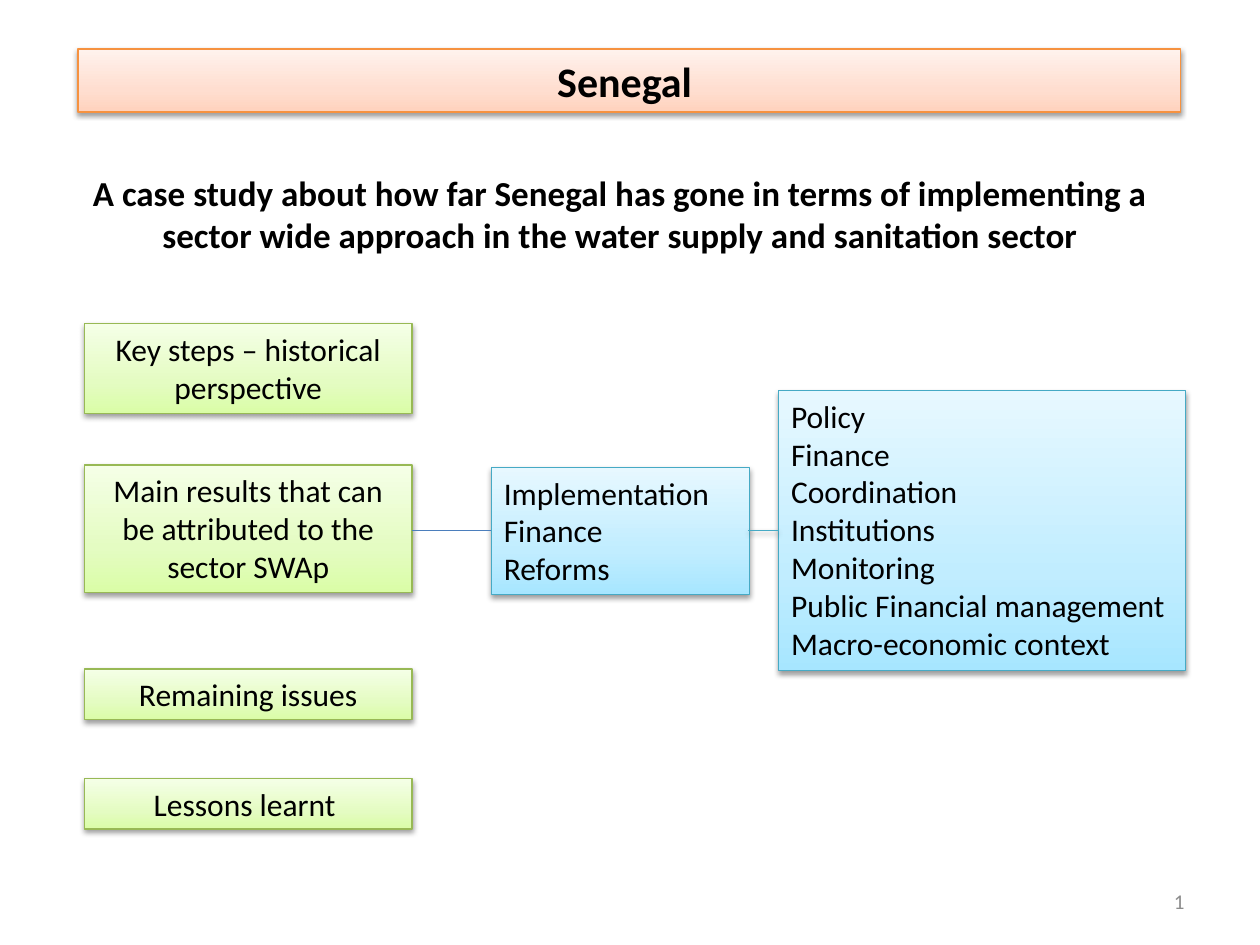
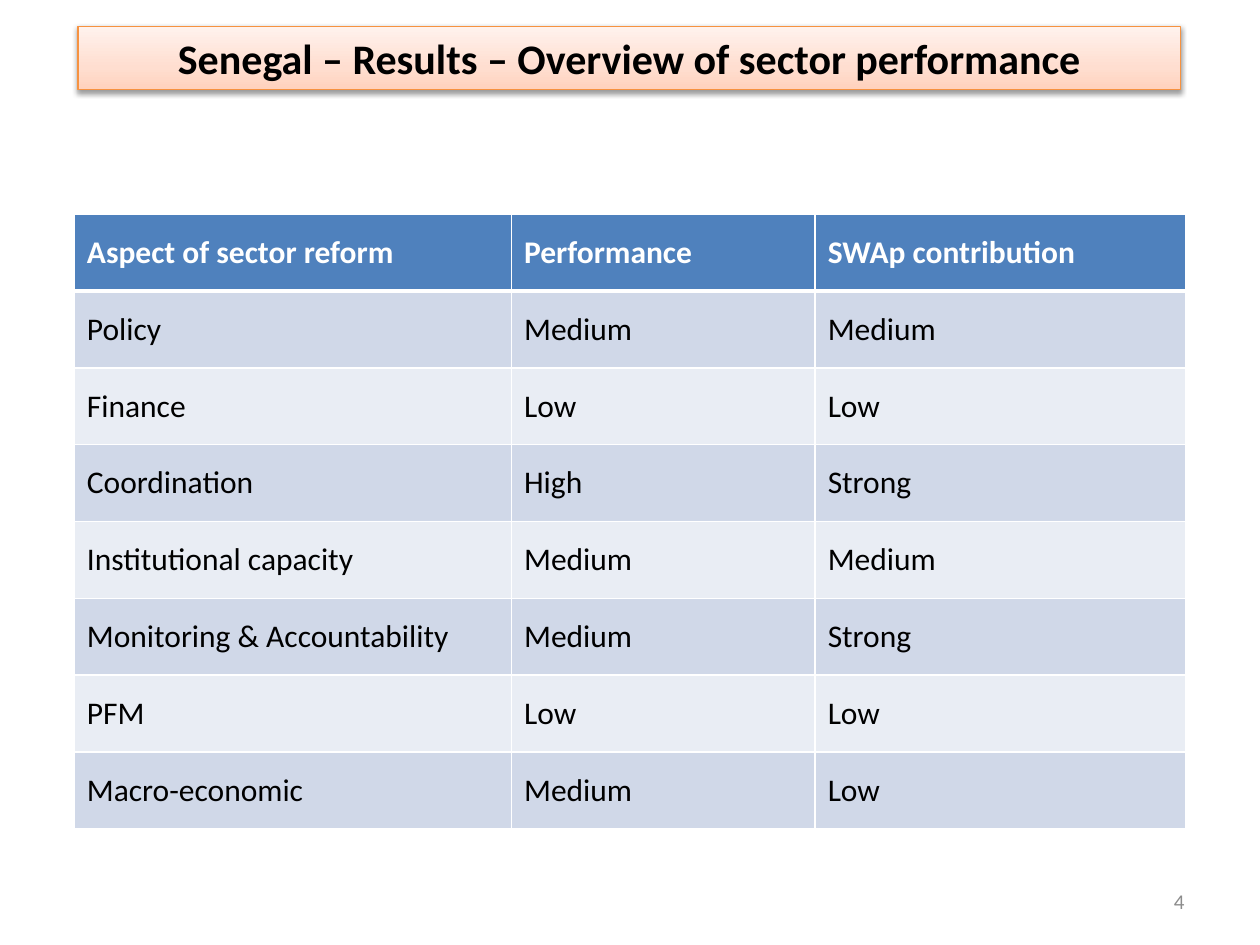
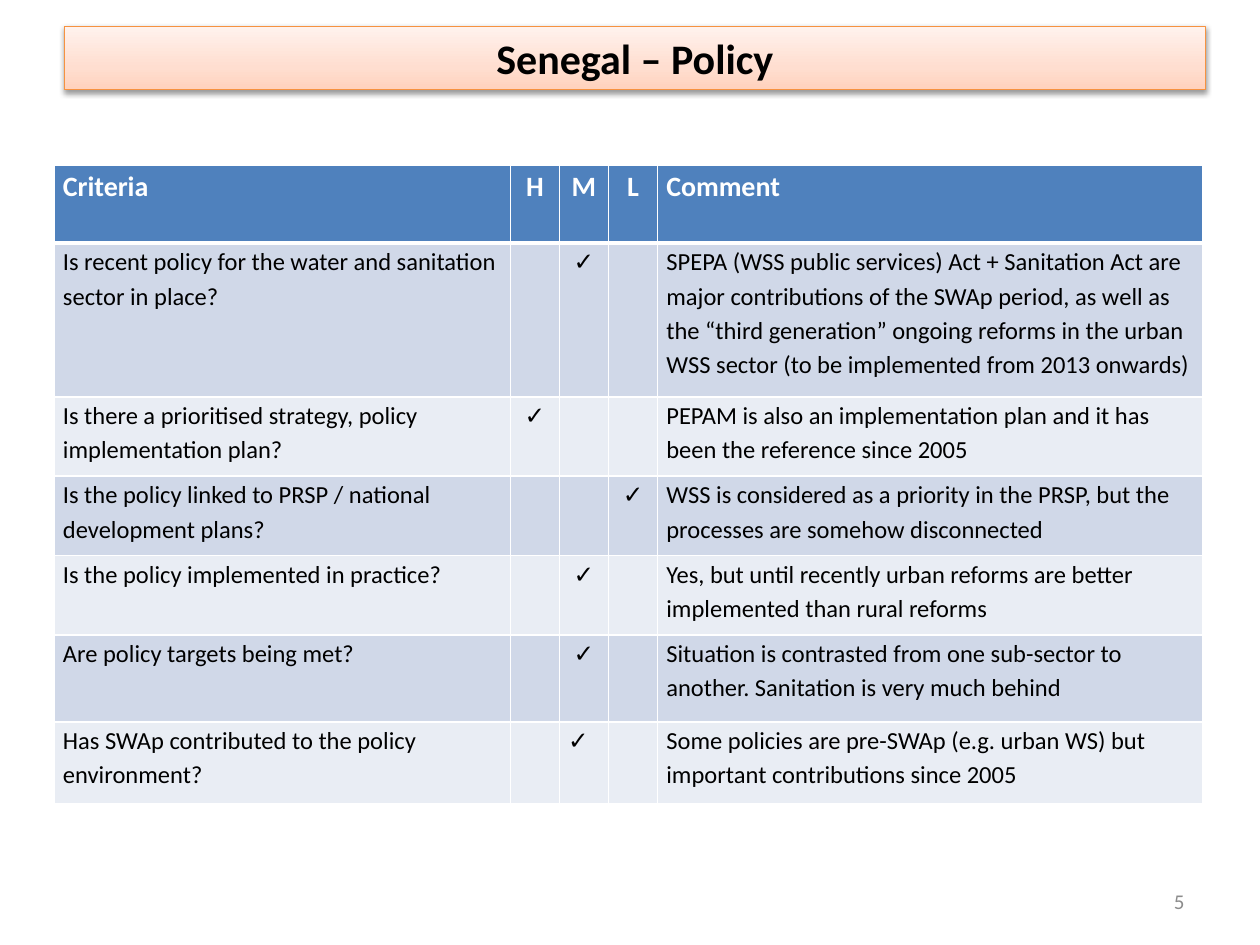
from dataclasses import dataclass
from typing import Any

from lxml.etree import SubElement
from pptx import Presentation
from pptx.dml.color import RGBColor
from pptx.enum.shapes import MSO_CONNECTOR as Connector, MSO_SHAPE as Preset
from pptx.enum.text import MSO_ANCHOR as Anchor, MSO_AUTO_SIZE as AutoSize, PP_ALIGN as Align
from pptx.oxml.ns import qn
from pptx.util import Inches, Pt


# Theme: colours and type sizes
@dataclass(frozen=True)
class Palette:
    stops: tuple[str, str, str]
    line: str


@dataclass(frozen=True)
class Theme:
    font: str = "Calibri"
    title: int = 24
    lead: int = 20
    body: int = 18
    criteria_header: int = 16
    criteria: int = 14
    number: int = 12
    black: str = "000000"
    white: str = "FFFFFF"
    grey: str = "8C8C8C"
    header_fill: str = "4F81BD"
    bands: tuple[str, str] = ("D0D8E8", "E9EDF4")
    link: str = "4B7EBC"
    orange: Palette = Palette(("FFD2BD", "FFDED0", "FFF2ED"), "F69240")
    green: Palette = Palette(("DAFDA7", "E4FCC2", "F5FFE7"), "98B955")
    blue: Palette = Palette(("A7E6FF", "C1EDFF", "E7F8FF"), "46AAC5")


THEME = Theme()
GROWING = {"word_wrap": True, "auto_size": AutoSize.SHAPE_TO_FIT_TEXT, "vertical_anchor": Anchor.TOP}
FIXED = {"word_wrap": True, "auto_size": AutoSize.NONE, "vertical_anchor": Anchor.MIDDLE}
OVERVIEW_CELL = {"vertical_anchor": Anchor.MIDDLE}
CRITERIA_CELL = {"vertical_anchor": Anchor.TOP, "margin_left": Inches(0.07),
                 "margin_right": Inches(0.07), "margin_top": 0, "margin_bottom": 0}


@dataclass(frozen=True)
class Box:
    left: float
    top: float
    width: float
    height: float

    def lengths(self) -> tuple[int, ...]:
        return tuple(Inches(v) for v in (self.left, self.top, self.width, self.height))


@dataclass(frozen=True)
class Panel:
    box: Box
    text: str
    palette: Palette
    align: Align = Align.CENTER
    size: int = THEME.body
    bold: bool = False


@dataclass(frozen=True)
class Grid:
    left: float
    top: float
    widths: tuple[float, ...]
    heights: tuple[float, ...]
    rows: tuple[tuple[str, ...], ...]
    aligns: tuple[Align, ...]
    header_size: int
    body_size: int
    cell_format: dict[str, Any]
    line_spacing: float = 1.0


# Text and effects
def apply(target: Any, values: dict[str, Any]) -> None:
    for name, value in values.items():
        setattr(target, name, value)


def write(frame: Any, text: str, size: int, colour: str, align: Align,
          bold: bool = False, spacing: float = 1.0) -> None:
    for index, line in enumerate(text.split("\n")):
        paragraph = frame.add_paragraph() if index else frame.paragraphs[0]
        apply(paragraph, {"alignment": align, "line_spacing": spacing})
        if line:
            run = paragraph.add_run()
            run.text = line
            apply(run.font, {"name": THEME.font, "size": Pt(size), "bold": bold})
            run.font.color.rgb = RGBColor.from_string(colour)


def add_colour(parent: Any, colour: str) -> Any:
    return SubElement(parent, qn("a:srgbClr"), val=colour)


def add_shadow(effects: Any) -> None:
    shadow = SubElement(effects, qn("a:outerShdw"), blurRad="40000", dist="20000",
                        dir="5400000", rotWithShape="0")
    SubElement(add_colour(shadow, THEME.black), qn("a:alpha"), val="38000")


def set_line(line: Any, colour: str) -> None:
    line.color.rgb = RGBColor.from_string(colour)
    line.width = Pt(0.75)


# Panels, connectors and text boxes
def draw_panel(slide: Any, panel: Panel) -> None:
    shape = slide.shapes.add_shape(Preset.RECTANGLE, *panel.box.lengths())
    shape.fill.gradient()
    shape.fill.gradient_angle = 90
    stops = shape.element.spPr.find(".//" + qn("a:gsLst"))
    stops.clear()
    for position, colour in zip((0, 35, 100), panel.palette.stops):
        add_colour(SubElement(stops, qn("a:gs"), pos=str(position * 1000)), colour)
    set_line(shape.line, panel.palette.line)
    shape.shadow.inherit = False
    add_shadow(shape.element.spPr.find(qn("a:effectLst")))
    apply(shape.text_frame, GROWING)
    write(shape.text_frame, panel.text, panel.size, THEME.black, panel.align, panel.bold)


def draw_link(slide: Any, start: float, end: float, y: float, colour: str, shadow: bool) -> None:
    link = slide.shapes.add_connector(Connector.STRAIGHT, Inches(start), Inches(y),
                                      Inches(end), Inches(y))
    set_line(link.line, colour)
    effects = SubElement(link.element.spPr, qn("a:effectLst"))
    if shadow:
        add_shadow(effects)


def draw_text(slide: Any, box: Box, text: str, size: int, colour: str, align: Align,
              frame_format: dict[str, Any], bold: bool = False) -> None:
    frame = slide.shapes.add_textbox(*box.lengths()).text_frame
    apply(frame, frame_format)
    write(frame, text, size, colour, align, bold)


# Title band and page number shared by all slides
def start_slide(deck: Any, title: str, number: int, left: float = 0.62,
                top: float = 0.21, width: float = 8.75) -> Any:
    slide = deck.slides.add_slide(deck.slide_layouts[6])
    draw_panel(slide, Panel(Box(left, top, width, 0.5), title, THEME.orange,
                            size=THEME.title, bold=True))
    draw_text(slide, Box(7.17, 6.95, 2.33, 0.4), str(number), THEME.number, THEME.grey,
              Align.RIGHT, FIXED)
    return slide


# Tables
def set_borders(cell: Any, bottom: int) -> None:
    properties = cell._tc.get_or_add_tcPr()
    for side, width in (("L", 1), ("R", 1), ("T", 1), ("B", bottom)):
        border = SubElement(properties, qn(f"a:ln{side}"), w=str(Pt(width)))
        add_colour(SubElement(border, qn("a:solidFill")), THEME.white)


def draw_grid(slide: Any, grid: Grid) -> Any:
    box = Box(grid.left, grid.top, sum(grid.widths), sum(grid.heights))
    table = slide.shapes.add_table(len(grid.rows), len(grid.widths), *box.lengths()).table
    for column, width in zip(table.columns, grid.widths):
        column.width = Inches(width)
    for r, (texts, height) in enumerate(zip(grid.rows, grid.heights)):
        table.rows[r].height = Inches(height)
        header = r == 0
        fill = THEME.header_fill if header else THEME.bands[(r - 1) % 2]
        for c, (text, align) in enumerate(zip(texts, grid.aligns)):
            cell = table.cell(r, c)
            apply(cell, grid.cell_format)
            set_borders(cell, bottom=3 if header else 1)
            cell.fill.solid()
            cell.fill.fore_color.rgb = RGBColor.from_string(fill)
            write(cell.text_frame, text, grid.header_size if header else grid.body_size,
                  THEME.white if header else THEME.black, align, header, grid.line_spacing)
    return table


# Content
LEAD = ("A case study about how far Senegal has gone in terms of implementing a "
        "sector wide approach in the water supply and sanitation sector")
TOPICS = (
    (2.57, 0.71, "Key steps – historical perspective"),
    (3.69, 1.01, "Main results that can be attributed to the sector SWAp"),
    (5.31, 0.4, "Remaining issues"),
    (6.18, 0.4, "Lessons learnt "),
)
RESULT_AREAS = "Implementation\nFinance\nReforms"
REFORM_ASPECTS = ("Policy\nFinance\nCoordination\nInstitutions\nMonitoring\n"
                  "Public Financial management\nMacro-economic context")
PERFORMANCE = (
    ("Aspect of sector reform", "Performance", "SWAp contribution"),
    ("Policy", "Medium", "Medium"),
    ("Finance", "Low", "Low"),
    ("Coordination", "High", "Strong"),
    ("Institutional capacity", "Medium", "Medium"),
    ("Monitoring & Accountability", "Medium", "Strong"),
    ("PFM", "Low", "Low"),
    ("Macro-economic", "Medium", "Low"),
)
RATINGS = ("H", "M", "L")
CRITERIA = (
    ("Is recent policy for the water and sanitation sector in place?", "M",
     "SPEPA (WSS public services) Act + Sanitation Act are major contributions of the SWAp "
     "period, as well as the “third generation” ongoing reforms in the urban WSS sector "
     "(to be implemented from 2013 onwards)"),
    ("Is there a prioritised strategy, policy implementation plan?", "H",
     "PEPAM is also an implementation plan and it has been the reference since 2005"),
    ("Is the policy linked to PRSP / national development plans?", "L",
     "WSS is considered as a priority in the PRSP, but the processes are somehow disconnected"),
    ("Is the policy implemented in practice?", "M",
     "Yes, but until recently urban reforms are better implemented than rural reforms"),
    ("Are policy targets being met?", "M",
     "Situation is contrasted from one sub-sector to another. Sanitation is very much behind"),
    ("Has SWAp contributed to the policy environment?", "M",
     "Some policies are pre-SWAp (e.g. urban WS) but important contributions since 2005"),
)


# Slides
def build_outline(deck: Any) -> None:
    slide = start_slide(deck, "Senegal ", 1, top=0.39)
    draw_text(slide, Box(0.59, 1.31, 8.66, 0.77), LEAD, THEME.lead, THEME.black,
              Align.CENTER, GROWING, bold=True)
    for top, height, topic in TOPICS:
        draw_panel(slide, Panel(Box(0.67, top, 2.6, height), topic, THEME.green))
    draw_panel(slide, Panel(Box(3.9, 3.71, 2.05, 1.01), RESULT_AREAS, THEME.blue, Align.LEFT))
    draw_panel(slide, Panel(Box(6.18, 3.1, 3.23, 2.22), REFORM_ASPECTS, THEME.blue, Align.LEFT))
    draw_link(slide, 3.27, 3.9, 4.21, THEME.link, shadow=False)
    draw_link(slide, 6.18, 5.94, 4.21, THEME.blue.line, shadow=True)


def build_performance(deck: Any) -> None:
    slide = start_slide(deck, "Senegal – Results – Overview of sector performance", 4)
    draw_grid(slide, Grid(0.59, 1.7, (3.47, 2.41, 2.94), (0.61,) * len(PERFORMANCE),
                          PERFORMANCE, (Align.LEFT,) * 3, THEME.body, THEME.body,
                          OVERVIEW_CELL))


def build_policy(deck: Any) -> None:
    slide = start_slide(deck, "Senegal – Policy", 5, left=0.51, width=9.06)
    header = ("Criteria", *RATINGS, "Comment")
    rows = tuple((question, *("✓" if rating == mark else "" for mark in RATINGS), comment)
                 for question, rating, comment in CRITERIA)
    table = draw_grid(slide, Grid(
        0.43, 1.31, (3.62, 0.39, 0.39, 0.39, 4.33), (0.62, 1.22, 0.63, 0.63, 0.63, 0.69, 0.65),
        (header, *rows), (Align.LEFT, *(Align.CENTER,) * 3, Align.LEFT),
        THEME.criteria_header, THEME.criteria, CRITERIA_CELL, line_spacing=1.15))
    # The closing question has its tick at the left of the cell
    table.cell(len(rows), 2).text_frame.paragraphs[0].alignment = Align.LEFT


def main() -> None:
    deck = Presentation()
    apply(deck, {"slide_width": Inches(10), "slide_height": Inches(7.5)})
    for build in (build_outline, build_performance, build_policy):
        build(deck)
    deck.save("out.pptx")


if __name__ == "__main__":
    main()
